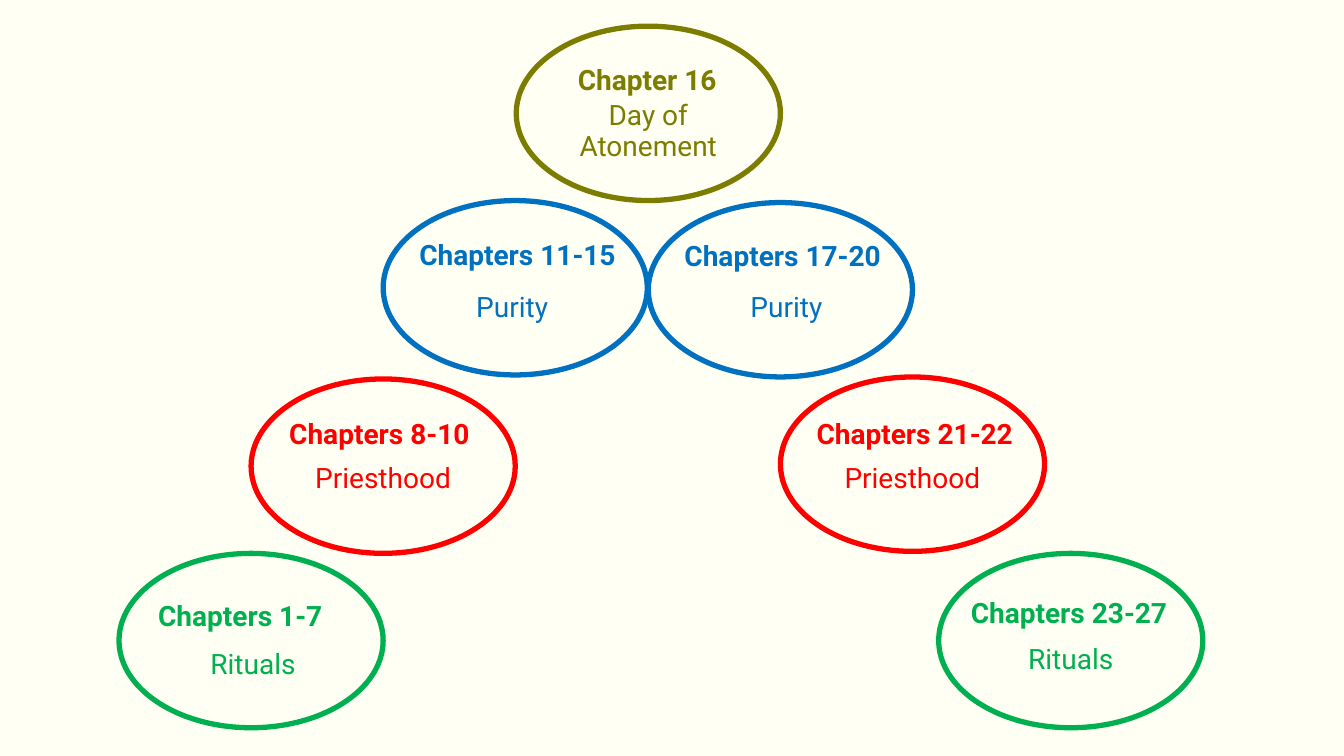
from pptx import Presentation
from pptx.dml.color import RGBColor
from pptx.enum.shapes import MSO_SHAPE
from pptx.enum.text import PP_ALIGN
from pptx.util import Inches, Pt

COLORS = {
    "background": "FFFFF3",
    "rituals": "00B050",
    "priesthood": "FF0000",
    "purity": "0070C0",
    "atonement": "7C7C00",
}
OVAL_WIDTH, OVAL_HEIGHT = 2.62, 1.73
TITLE_WIDTH, THEME_WIDTH, TEXT_HEIGHT = 2.62, 2.04, 0.53

# colour, oval (left, top), title, title (left, top), theme, theme (left, top)
SECTIONS = [
    ("rituals", (1.18, 5.49), "Chapters 1-7", (1.47, 5.93), "Rituals", (1.49, 6.4)),
    ("priesthood", (2.49, 3.76), "Chapters 8-10", (2.77, 4.12), "Priesthood", (2.78, 4.56)),
    ("purity", (3.8, 1.99), "Chapters 11-15", (4.06, 2.34), "Purity", (4.06, 2.86)),
    ("purity", (6.43, 2.01), "Chapters 17-20", (6.69, 2.35), "Purity", (6.78, 2.86)),
    ("priesthood", (7.74, 3.74), "Chapters 21-22", (8, 4.12), "Priesthood", (8.03, 4.56)),
    ("rituals", (9.31, 5.49), "Chapters 23-27", (9.53, 5.9), "Rituals", (9.6, 6.35)),
]


def rgb(name):
    return RGBColor.from_string(COLORS[name])


def add_oval(page, position, color):
    left, top = position
    oval = page.shapes.add_shape(MSO_SHAPE.OVAL, Inches(left), Inches(top),
                                 Inches(OVAL_WIDTH), Inches(OVAL_HEIGHT))
    oval.shadow.inherit = False
    oval.fill.background()
    oval.line.color.rgb = rgb(color)
    oval.line.width = Pt(3.78)


def add_label(page, text, position, width, color, bold=False,
              align=PP_ALIGN.CENTER, height=TEXT_HEIGHT):
    left, top = position
    box = page.shapes.add_textbox(Inches(left), Inches(top),
                                  Inches(width), Inches(height))
    box.text_frame.word_wrap = True
    para = box.text_frame.paragraphs[0]
    para.text = text
    para.alignment = align
    para.line_spacing = 0.9
    para.font.name = "Roboto"
    para.font.size = Pt(20)
    para.font.bold = bold
    para.font.color.rgb = rgb(color)


def add_section(page, color, oval_at, title, title_at, theme, theme_at):
    add_oval(page, oval_at, color)
    add_label(page, title, title_at, TITLE_WIDTH, color, bold=True, align=PP_ALIGN.LEFT)
    add_label(page, theme, theme_at, THEME_WIDTH, color)


def add_summit(page):
    """Add the top oval, whose title is centred and whose theme takes two lines."""
    add_oval(page, (5.12, 0.26), "atonement")
    add_label(page, "Chapter 16", (5.37, 0.61), 2.1, "atonement", bold=True)
    add_label(page, "Day of Atonement", (5.23, 0.96), 2.4, "atonement", height=1.19)


def main():
    deck = Presentation()
    deck.slide_width = Inches(13.33)
    deck.slide_height = Inches(7.5)
    page = deck.slides.add_slide(deck.slide_layouts[6])
    page.background.fill.solid()
    page.background.fill.fore_color.rgb = rgb("background")
    for section in SECTIONS:
        add_section(page, *section)
    add_summit(page)
    deck.save("out.pptx")


if __name__ == "__main__":
    main()
